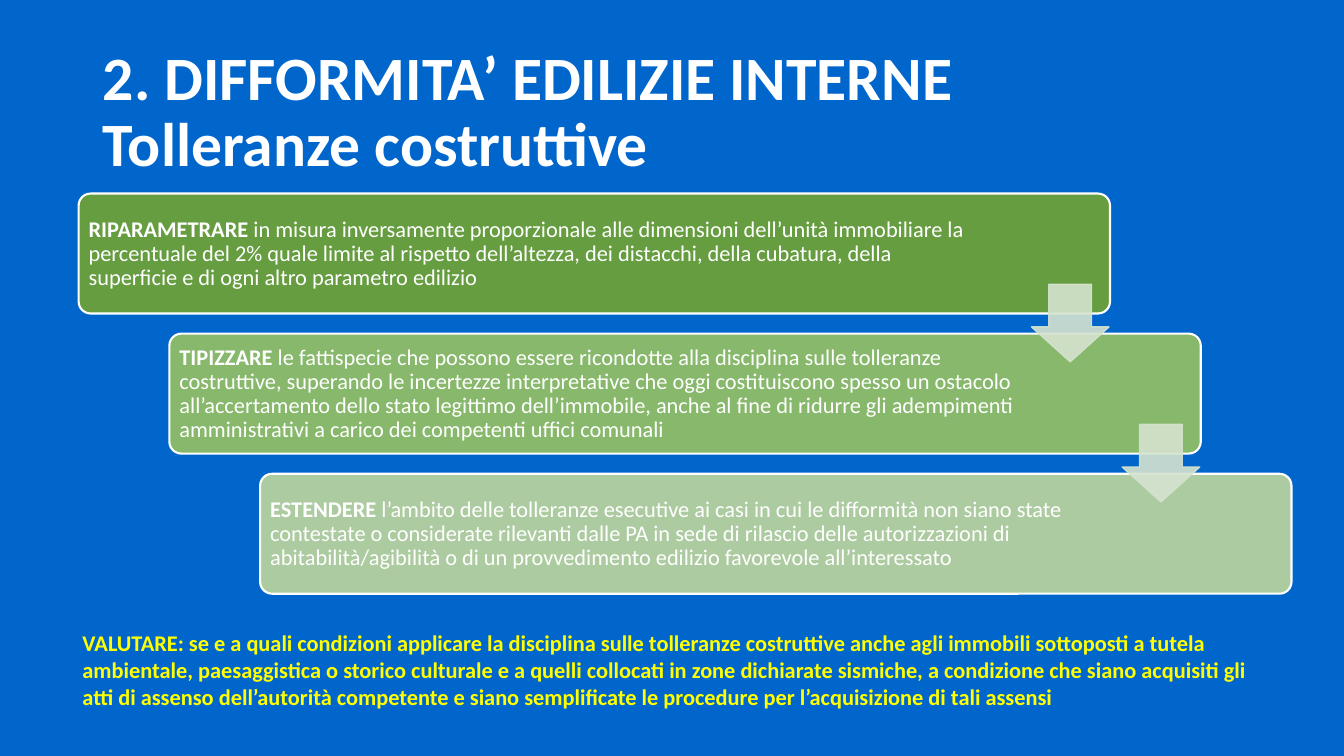
from lxml.etree import SubElement
from pptx import Presentation
from pptx.dml.color import RGBColor
from pptx.enum.shapes import MSO_SHAPE as Shape
from pptx.enum.text import MSO_ANCHOR as Anchor, PP_ALIGN as Align
from pptx.oxml.ns import qn
from pptx.util import Inches, Pt

WHITE = "FFFFFF"
YELLOW = "FFFF00"
BACKGROUND = "0066CC"
ARROW_COLOUR = "D5E3CF"
CARD_LEFT, CARD_TOP, CARD_WIDTH, CARD_HEIGHT = 0.78, 1.92, 10.23, 1.19
STEP_X, STEP_Y = 0.9, 1.39
ARROW_LEFT, ARROW_TOP, ARROW_SIZE = 10.23, 2.82, 0.77

TITLE = "2. DIFFORMITA’ EDILIZIE INTERNE \vTolleranze costruttive"
CARDS = [
    ("669D40", 8.94, "RIPARAMETRARE",
     " in misura inversamente proporzionale alle dimensioni dell’unità immobiliare "
     "la percentuale del 2% quale limite al rispetto dell’altezza, dei distacchi, "
     "della cubatura, della superficie e di ogni altro parametro edilizio"),
    ("87B86B", 8.48, "TIPIZZARE",
     " le fattispecie che possono essere ricondotte alla disciplina sulle tolleranze "
     "costruttive, superando le incertezze interpretative che oggi costituiscono "
     "spesso un ostacolo all’accertamento dello stato legittimo dell’immobile, anche "
     "al fine di ridurre gli adempimenti amministrativi a carico dei competenti "
     "uffici comunali"),
    ("ADCBA0", 8.48, "ESTENDERE",
     " l’ambito delle tolleranze esecutive ai casi in cui le difformità non siano "
     "state contestate o considerate rilevanti dalle PA in sede di rilascio delle "
     "autorizzazioni di abitabilità/agibilità o di un provvedimento edilizio "
     "favorevole all’interessato"),
]
FOOTER = (
    "VALUTARE: se e a quali condizioni applicare la disciplina sulle tolleranze "
    "costruttive anche agli immobili sottoposti a tutela ambientale, paesaggistica o "
    "storico culturale e a quelli collocati in zone dichiarate sismiche, a condizione "
    "che siano acquisiti gli atti di assenso dell’autorità competente e siano "
    "semplificate le procedure per l’acquisizione di tali assensi"
)


def colour(hex_code):
    """Return the colour for a hex string."""
    return RGBColor.from_string(hex_code)


def format_span(span, size, hex_code, bold=True):
    """Set the font of one run."""
    span.font.name = "Calibri"
    span.font.size = Pt(size)
    span.font.bold = bold
    span.font.color.rgb = colour(hex_code)


def add_title(page):
    """Place and format the title placeholder."""
    title = page.shapes.title
    title.left, title.top = Inches(0.92), Inches(0.4)
    title.width, title.height = Inches(11.5), Inches(1.45)
    frame = title.text_frame
    frame.text = TITLE
    frame.word_wrap = True
    frame.vertical_anchor = Anchor.MIDDLE
    para = frame.paragraphs[0]
    para.alignment = Align.LEFT
    para.line_spacing = 0.9
    for span in para.runs:
        format_span(span, 44, WHITE)


def add_shape(page, preset, place, fill, line, line_width, adjustments):
    """Add a filled and outlined preset shape without shadow."""
    shape = page.shapes.add_shape(preset, *map(Inches, place))
    shape.shadow.inherit = False
    shape.fill.solid()
    shape.fill.fore_color.rgb = colour(fill)
    shape.line.color.rgb = colour(line)
    shape.line.width = Pt(line_width)
    for index, value in enumerate(adjustments):
        shape.adjustments[index] = value
    return shape


def add_text(page, place, spans, hex_code):
    """Add a wrapping text box made of (text, bold) spans."""
    box = page.shapes.add_textbox(*map(Inches, place))
    box.text_frame.word_wrap = True
    para = box.text_frame.paragraphs[0]
    for text, bold in spans:
        span = para.add_run()
        span.text = text
        format_span(span, 16, hex_code, bold)
    return box.text_frame


def add_card(page, index, fill, text_width, keyword, text):
    """Add one card of the staircase with its text."""
    left, top = CARD_LEFT + index * STEP_X, CARD_TOP + index * STEP_Y
    add_shape(page, Shape.ROUNDED_RECTANGLE, (left, top, CARD_WIDTH, CARD_HEIGHT),
              fill, WHITE, 1.5, [0.1])
    frame = add_text(page, (left + 0.03, top + 0.04, text_width, 1.12),
                     [(keyword, True), (text, False)], WHITE)
    frame.vertical_anchor = Anchor.MIDDLE
    frame.margin_left = frame.margin_right = Inches(0.07)
    frame.margin_top = frame.margin_bottom = Inches(0.07)
    frame.paragraphs[0].line_spacing = 0.9


def add_arrow(page, index):
    """Add a slightly transparent arrow leading to the next card."""
    place = (ARROW_LEFT + index * STEP_X, ARROW_TOP + index * STEP_Y,
             ARROW_SIZE, ARROW_SIZE)
    arrow = add_shape(page, Shape.DOWN_ARROW, place, ARROW_COLOUR, ARROW_COLOUR,
                      1, [0.55, 0.45])
    for tint in arrow.element.spPr.iter(qn("a:srgbClr")):
        SubElement(tint, qn("a:alpha"), val="90000")


def main():
    """Build the slide and save the deck."""
    deck = Presentation()
    deck.slide_width, deck.slide_height = Inches(13.33), Inches(7.5)
    page = deck.slides.add_slide(deck.slide_layouts[5])
    page.background.fill.solid()
    page.background.fill.fore_color.rgb = colour(BACKGROUND)
    add_title(page)
    for index, card in enumerate(CARDS):
        add_card(page, index, *card)
    for index in range(len(CARDS) - 1):
        add_arrow(page, index)
    add_text(page, (0.72, 6.19, 12.03, 0.91), [(FOOTER, True)], YELLOW)
    deck.save("out.pptx")


if __name__ == "__main__":
    main()
